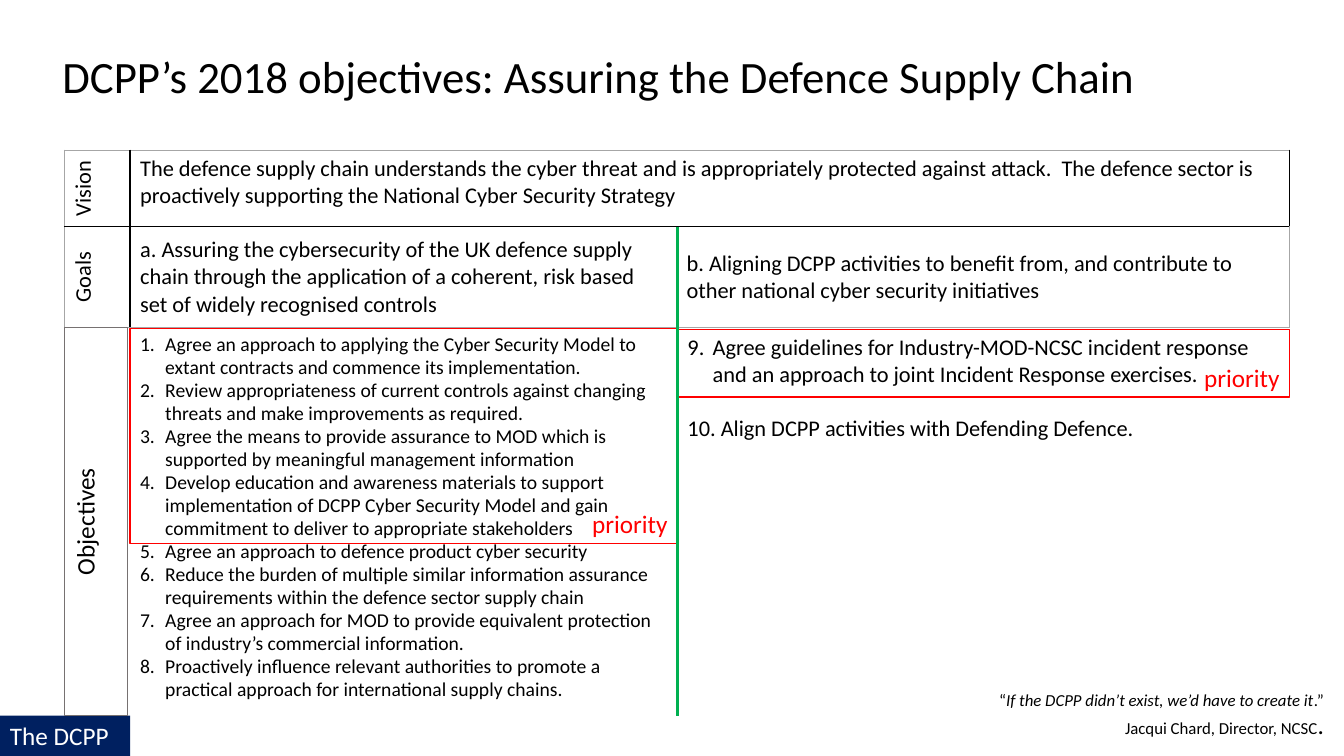
from dataclasses import dataclass

from lxml import etree
from pptx import Presentation
from pptx.dml.color import RGBColor
from pptx.enum.shapes import MSO_CONNECTOR, MSO_SHAPE
from pptx.enum.text import MSO_ANCHOR, PP_ALIGN
from pptx.oxml.ns import qn
from pptx.util import Inches, Pt

RECT, LINE = MSO_SHAPE.RECTANGLE, MSO_CONNECTOR.STRAIGHT
LEFT, MID, RIGHT = PP_ALIGN.LEFT, PP_ALIGN.CENTER, PP_ALIGN.RIGHT
TOP, CENTRE, BASE = MSO_ANCHOR.TOP, MSO_ANCHOR.MIDDLE, MSO_ANCHOR.BOTTOM
UPWARD = "vert270"


@dataclass(frozen=True)
class Theme:
    font: str = "Calibri"
    black: str = "000000"
    white: str = "FFFFFF"
    navy: str = "002060"
    red: str = "FF0000"
    green: str = "00B050"
    grey: str = "767171"
    pale: str = "A6A6A6"
    title: int = 32
    large: int = 18
    body: int = 16
    small: int = 14
    quote: int = 12


class Board:
    def __init__(self, slide, theme):
        self.slide, self.theme = slide, theme

    def run(self, para, text, size, color=None, italic=False):
        run = para.add_run()
        run.text = text
        font = run.font
        font.name, font.size, font.italic = self.theme.font, Pt(size), italic
        font.color.rgb = RGBColor.from_string(color or self.theme.black)

    def paras(self, frame, lines, color=None, align=LEFT):
        """Fill a frame; each line is a list of (text, size, italic) runs."""
        for i, line in enumerate(lines):
            para = frame.add_paragraph() if i else frame.paragraphs[0]
            para.alignment = align
            for text, size, italic in line:
                self.run(para, text, size, color, italic)

    def text(self, box, lines, align=LEFT):
        frame = self.slide.shapes.add_textbox(*map(Inches, box)).text_frame
        frame.word_wrap = True
        self.paras(frame, lines, align=align)
        return frame

    def list(self, box, items, size, start=1, gap=0, lead=1.0):
        """Numbered list with a hanging indent; gap separates the items."""
        frame = self.text(box, [[(item, size, False)] for item in items])
        for i, para in enumerate(frame.paragraphs):
            para.line_spacing = lead
            para.space_before = Pt(gap if i else 0)
            props = para._p.get_or_add_pPr()
            props.set("marL", str(Inches(0.25)))
            props.set("indent", str(-Inches(0.25)))
            mark = etree.SubElement(props, qn("a:buAutoNum"), type="arabicPeriod")
            if start > 1:
                mark.set("startAt", str(start))

    def rect(self, box, text, color, fill=None, line=None, width=1,
             align=LEFT, anchor=TOP, vert=None):
        shape = self.slide.shapes.add_shape(RECT, *map(Inches, box))
        shape.shadow.inherit = False
        if fill:
            shape.fill.solid()
            shape.fill.fore_color.rgb = RGBColor.from_string(fill)
        else:
            shape.fill.background()
        if line:
            shape.line.color.rgb = RGBColor.from_string(line)
            shape.line.width = Pt(width)
        else:
            shape.line.fill.background()
        frame = shape.text_frame
        frame.word_wrap, frame.vertical_anchor = True, anchor
        if vert:
            frame._txBody.bodyPr.set("vert", vert)
        self.paras(frame, [[(text, self.theme.large, False)]], color, align)

    def line(self, x, top, end, color, width):
        ends = map(Inches, (x, top, x, end))
        line = self.slide.shapes.add_connector(LINE, *ends)
        line.line.color.rgb = RGBColor.from_string(color)
        line.line.width = Pt(width)
        etree.SubElement(line._element.spPr, qn("a:effectLst"))

    def edges(self, cell, colors):
        """Border a cell; colors run left, right, top, bottom."""
        props = cell._tc.get_or_add_tcPr()
        for i, (side, color) in enumerate(zip("LRTB", colors)):
            edge = etree.Element(qn("a:ln" + side), w=str(Pt(1)))
            fill = etree.SubElement(edge, qn("a:solidFill"))
            etree.SubElement(fill, qn("a:srgbClr"), val=color)
            props.insert(i, edge)

    def table(self, box, cols, rows, data):
        """Draw rows of text; the first column reads upward."""
        size = len(rows), len(cols)
        table = self.slide.shapes.add_table(*size, *map(Inches, box)).table
        table.first_row = table.horz_banding = False
        for col, width in zip(table.columns, cols):
            col.width = Inches(width)
        for row, height in zip(table.rows, rows):
            row.height = Inches(height)
        black, pale = self.theme.black, self.theme.pale
        for r, row in enumerate(data):
            for c in range(len(cols)):
                cell = table.cell(r, c)
                cell.fill.background()
                last = c == len(cols) - 1
                self.edges(cell, (black if c else pale, pale if last else black,
                                  black if r else pale,
                                  pale if r == len(rows) - 1 else black))
                if c >= len(row):
                    continue
                cell.vertical_anchor = CENTRE if r and c else TOP
                if not c:
                    cell._tc.get_or_add_tcPr().set("vert", UPWARD)
                self.paras(cell.text_frame, [[(row[c], self.theme.body, False)]],
                           align=LEFT if c else MID)
            if len(row) < len(cols):
                table.cell(r, len(row) - 1).merge(table.cell(r, len(cols) - 1))


GRID = [
    ["Vision", "The defence supply chain understands the cyber threat and is "
     "appropriately protected against attack.  The defence sector is "
     "proactively supporting the National Cyber Security Strategy"],
    ["Goals", "a. Assuring the cybersecurity of the UK defence supply chain "
     "through the application of a coherent, risk based set of widely "
     "recognised controls",
     "b. Aligning DCPP activities to benefit from, and contribute to other "
     "national cyber security initiatives"],
]
ASSURE = [
    "Agree an approach to applying the Cyber Security Model to extant contracts "
    "and commence its implementation.",
    "Review appropriateness of current controls against changing threats and "
    "make improvements as required.",
    "Agree the means to provide assurance to MOD which is supported by "
    "meaningful management information",
    "Develop education and awareness materials to support implementation of "
    "DCPP Cyber Security Model and gain commitment to deliver to appropriate "
    "stakeholders",
    "Agree an approach to defence product cyber security",
    "Reduce the burden of multiple similar information assurance requirements "
    "within the defence sector supply chain",
    "Agree an approach for MOD to provide equivalent protection of industry’s "
    "commercial information.",
    "Proactively influence relevant authorities to promote a practical approach "
    "for international supply chains.",
]
ALIGN = [
    "Agree guidelines for Industry-MOD-NCSC incident response and an approach "
    "to joint Incident Response exercises.",
    " Align DCPP activities with Defending Defence.",
]


def main():
    deck = Presentation()
    deck.slide_width, deck.slide_height = Inches(13.33), Inches(7.5)
    theme = Theme()
    board = Board(deck.slides.add_slide(deck.slide_layouts[6]), theme)
    edge, split, right = 0.64, 1.29, 6.72
    top, foot = 3.25, 7.1

    board.text((6.57, 6.79, 6.66, 0.61), [
        [("“", theme.quote, False),
         ("If the DCPP didn’t exist, we’d have to create it", theme.quote, True),
         (".”", theme.quote, False)],
        [("Jacqui Chard, Director, NCSC", theme.quote, False),
         (".", theme.large, False)]], RIGHT)
    board.rect((0, foot, split, 0.4), "The DCPP", theme.white, fill=theme.navy)
    board.table((edge, 1.49, 12.15, 1.76), (0.65, 5.42, 6.08), (0.76, 1), GRID)
    board.list((split, top, 5.41, 4.15), ASSURE, theme.small, lead=0.98)
    board.list((right, 3.26, 6.08, 2.7), ALIGN, theme.body, start=9, gap=19.5)
    for box in ((split, 3.26, 5.43, 2.13), (right, 3.27, 6.07, 0.67)):
        board.rect(box, "priority", theme.red, line=theme.red,
                   align=RIGHT, anchor=BASE)
    board.text((0.52, 0.43, 12.39, 0.64), [
        [("DCPP’s 2018 objectives: Assuring the Defence Supply Chain",
          theme.title, False)]])
    board.line(right, 2.25, foot, theme.green, 2.25)
    board.rect((edge, top, 0.63, foot - top), "Objectives", theme.black,
               line=theme.grey, width=0.75, align=MID, vert=UPWARD)
    deck.save("out.pptx")


if __name__ == "__main__":
    main()
